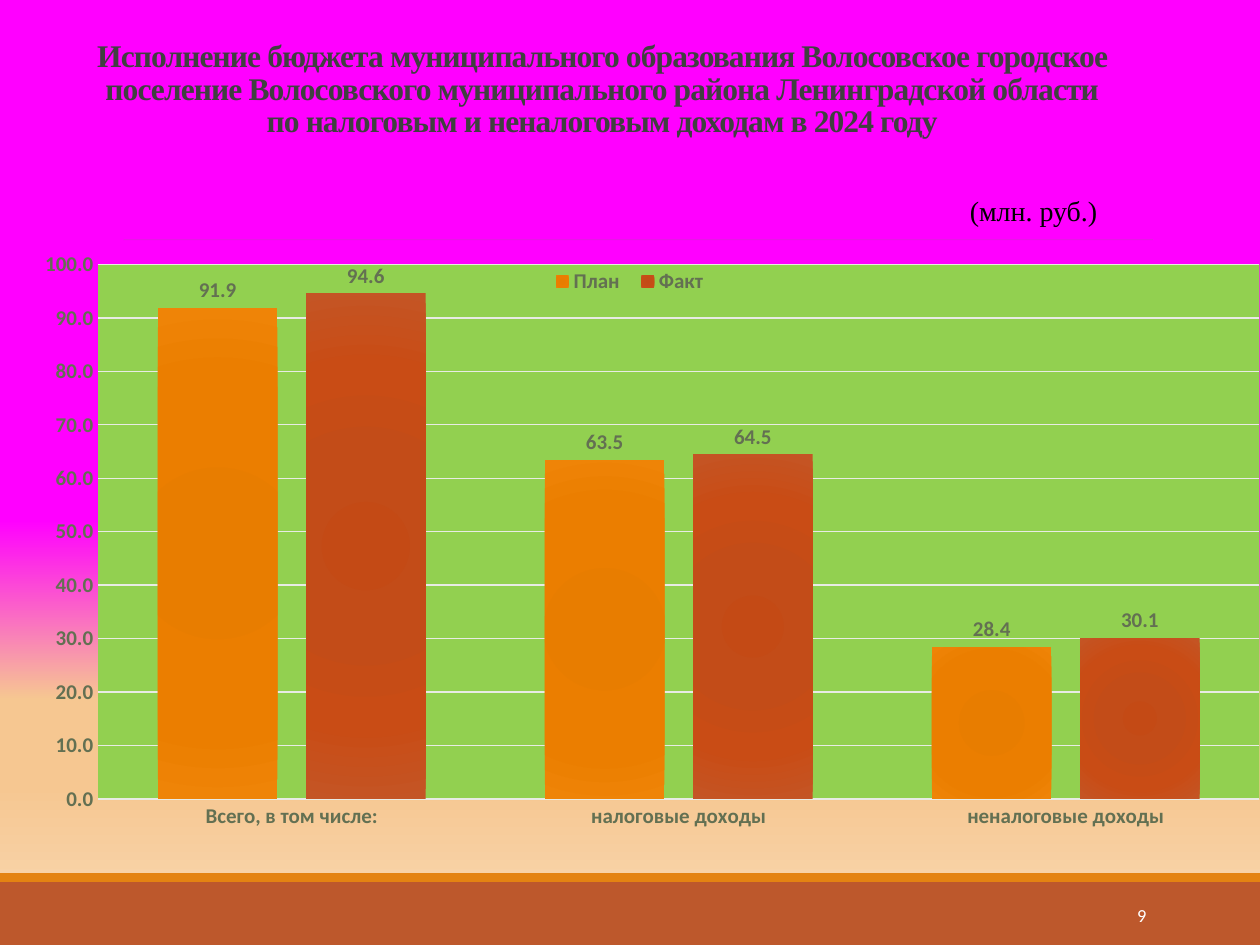
from lxml import etree
from pptx import Presentation
from pptx.chart.data import CategoryChartData
from pptx.dml.color import RGBColor
from pptx.enum.chart import XL_CHART_TYPE, XL_LABEL_POSITION, XL_LEGEND_POSITION, XL_TICK_MARK
from pptx.enum.shapes import MSO_CONNECTOR, MSO_SHAPE
from pptx.enum.text import MSO_ANCHOR, PP_ALIGN
from pptx.oxml import parse_xml
from pptx.oxml.ns import nsdecls, qn
from pptx.util import Cm, Pt

COLOURS = {
    "footer": "BD582C", "stripe": "E48312", "rule": "808080", "title": "404040",
    "unit": "000000", "number": "FFFFFF", "label": "637052", "grid": "E8EBE4",
    "plot": "92D050",
}
BACKGROUND = [(55, "FF00FF"), (74, "F6C791"), (83, "F6C791"), (100, "F9DAB6")]
BARS = [
    ("План", (91.9, 63.5, 28.4),
     [(0, "E57B00"), (34, "E87D00"), (70, "EB7E00"), (100, "EF8407")]),
    ("Факт", (94.6, 64.5, 30.1),
     [(0, "C44A15"), (34, "C34C18"), (70, "C94C15"), (100, "C45525")]),
]
CATEGORIES = ("Всего, в том числе:", "налоговые доходы", "неналоговые доходы")
NUMBER_FORMAT = "#,##0.0"
LINEAR = '<a:lin ang="5400000" scaled="0"/>'
CIRCLE = '<a:path path="circle"><a:fillToRect l="100000" t="100000" r="100000" b="100000"/></a:path>'


def apply(target, values):
    for name, value in values.items():
        setattr(target, name, value)


def set_gradient(fill, parent, stops, direction):
    """Replace the two-stop default gradient of a fill by the given stops."""
    fill.gradient()
    default = parent.find(qn("a:gradFill"))
    marks = "".join(
        f'<a:gs pos="{place * 1000}"><a:srgbClr val="{colour}"/></a:gs>'
        for place, colour in stops)
    parent.replace(default, parse_xml(
        f'<a:gradFill {nsdecls("a")} rotWithShape="1">'
        f'<a:gsLst>{marks}</a:gsLst>{direction}</a:gradFill>'))


def set_layout(parent, position, box, target=None):
    """Give a chart part a manual layout in fractions of the chart."""
    for old in parent.findall(qn("c:layout")):
        parent.remove(old)
    entries = [("layoutTarget", target)] if target else []
    entries += [("xMode", "edge"), ("yMode", "edge")] + list(zip("xywh", box))
    parts = "".join(f'<c:{tag} val="{value}"/>' for tag, value in entries)
    parent.insert(position, parse_xml(
        f'<c:layout {nsdecls("c")}><c:manualLayout>{parts}</c:manualLayout></c:layout>'))


class BudgetSlide:
    def __init__(self, slide):
        self.slide = slide
        self.chart_font = {"size": Pt(12), "bold": True, "name": "Calibri"}

    def colour(self, name):
        return RGBColor.from_string(COLOURS[name])

    def background(self, stops):
        fill = self.slide.background.fill
        fill.solid()
        set_gradient(fill, self.slide.background._cSld.bg.bgPr, stops, LINEAR)

    def band(self, colour, top, height):
        band = self.slide.shapes.add_shape(MSO_SHAPE.RECTANGLE, 0, Cm(top), Cm(25.4), Cm(height))
        band.shadow.inherit = False
        band.fill.solid()
        band.fill.fore_color.rgb = self.colour(colour)
        band.line.fill.background()

    def rule(self, left, right, top):
        rule = self.slide.shapes.add_connector(
            MSO_CONNECTOR.STRAIGHT, Cm(left), Cm(top), Cm(right), Cm(top))
        rule.line.width = Pt(0.5)
        rule.line.color.rgb = self.colour("rule")
        properties = rule._element.spPr
        tint = properties.find(".//" + qn("a:srgbClr"))
        etree.SubElement(tint, qn("a:alpha"), val="20000")
        etree.SubElement(properties, qn("a:effectLst"))

    def text(self, words, box, colour, font, paragraph=None, frame=None, spacing=None):
        holder = self.slide.shapes.add_textbox(*map(Cm, box)).text_frame
        apply(holder, {"word_wrap": True, **(frame or {})})
        line = holder.paragraphs[0]
        line.text = words
        apply(line, paragraph or {})
        for run in line.runs:
            apply(run.font, font)
            run.font.color.rgb = self.colour(colour)
            if spacing:
                run._r.get_or_add_rPr().set("spc", str(spacing))

    def label_style(self, font):
        apply(font, self.chart_font)
        font.color.rgb = self.colour("label")

    def grid_line(self, line):
        line.width = Pt(0.75)
        line.color.rgb = self.colour("grid")

    def column_chart(self, box):
        data = CategoryChartData(number_format=NUMBER_FORMAT)
        data.categories = CATEGORIES
        for name, values, _ in BARS:
            data.add_series(name, values)
        chart = self.slide.shapes.add_chart(
            XL_CHART_TYPE.COLUMN_CLUSTERED, *map(Cm, box), data).chart
        apply(chart, {"has_title": False, "has_legend": True})
        apply(chart.font, {"size": Pt(10), "name": "Calibri"})

        # Plot area
        plot = chart.plots[0]
        apply(plot, {"gap_width": 100, "overlap": -24, "vary_by_categories": False})
        plot_area = chart._chartSpace.chart.plotArea
        set_layout(plot_area, 0, (0.078, 0.048, 0.922, 0.843), "inner")
        plot_area.append(parse_xml(
            f'<c:spPr {nsdecls("c", "a")}><a:solidFill>'
            f'<a:srgbClr val="{COLOURS["plot"]}"/></a:solidFill></c:spPr>'))

        # Bars and their values
        for series, (_, _, stops) in zip(plot.series, BARS):
            series.invert_if_negative = False
            set_gradient(series.format.fill, series._element.spPr, stops, CIRCLE)
            labels = series.data_labels
            apply(labels, {"show_value": True, "number_format": NUMBER_FORMAT,
                           "number_format_is_linked": False,
                           "position": XL_LABEL_POSITION.OUTSIDE_END})
            self.label_style(labels.font)

        # Axes
        for axis in (chart.category_axis, chart.value_axis):
            apply(axis, {"major_tick_mark": XL_TICK_MARK.NONE,
                         "minor_tick_mark": XL_TICK_MARK.NONE})
            self.label_style(axis.tick_labels.font)
        self.grid_line(chart.category_axis.format.line)
        scale = chart.value_axis
        apply(scale, {"minimum_scale": 0, "maximum_scale": 100, "major_unit": 10,
                      "has_major_gridlines": True})
        apply(scale.tick_labels, {"number_format": NUMBER_FORMAT,
                                  "number_format_is_linked": False})
        scale.format.line.fill.background()
        self.grid_line(scale.major_gridlines.format.line)

        # Legend inside the top of the plot
        legend = chart.legend
        apply(legend, {"position": XL_LEGEND_POSITION.BOTTOM, "include_in_layout": False})
        self.label_style(legend.font)
        set_layout(legend._element, 1, (0.43, 0.05, 0.14, 0.05))


def main():
    deck = Presentation()
    apply(deck, {"slide_width": Cm(25.4), "slide_height": Cm(19.05)})
    page = BudgetSlide(deck.slides.add_slide(deck.slide_layouts[6]))

    # Backdrop
    page.background(BACKGROUND)
    page.band("footer", 17.78, 1.27)
    page.band("stripe", 17.6, 0.18)
    page.rule(2.49, 23.24, 4.83)

    # Heading, page number and unit
    page.text("Исполнение бюджета муниципального образования Волосовское городское "
              "поселение Волосовского муниципального района Ленинградской области\v"
              "по налоговым и неналоговым доходам в 2024 году",
              (1.27, 0.33, 21.74, 2.59), "title",
              {"size": Pt(18), "name": "Times New Roman", "bold": True},
              {"alignment": PP_ALIGN.CENTER, "line_spacing": 0.85},
              {"vertical_anchor": MSO_ANCHOR.BOTTOM}, spacing=-50)
    page.text("9", (20.62, 17.93, 2.74, 1.02), "number",
              {"size": Pt(10.5), "name": "Calibri"}, {"alignment": PP_ALIGN.RIGHT},
              {"vertical_anchor": MSO_ANCHOR.MIDDLE})
    page.text("(млн. руб.)", (19.3, 3.78, 3.45, 0.94), "unit",
              {"size": Pt(16), "name": "Times New Roman"})

    # Plan against result
    page.column_chart((0, 4.72, 25.4, 12.78))
    deck.save("out.pptx")


if __name__ == "__main__":
    main()
